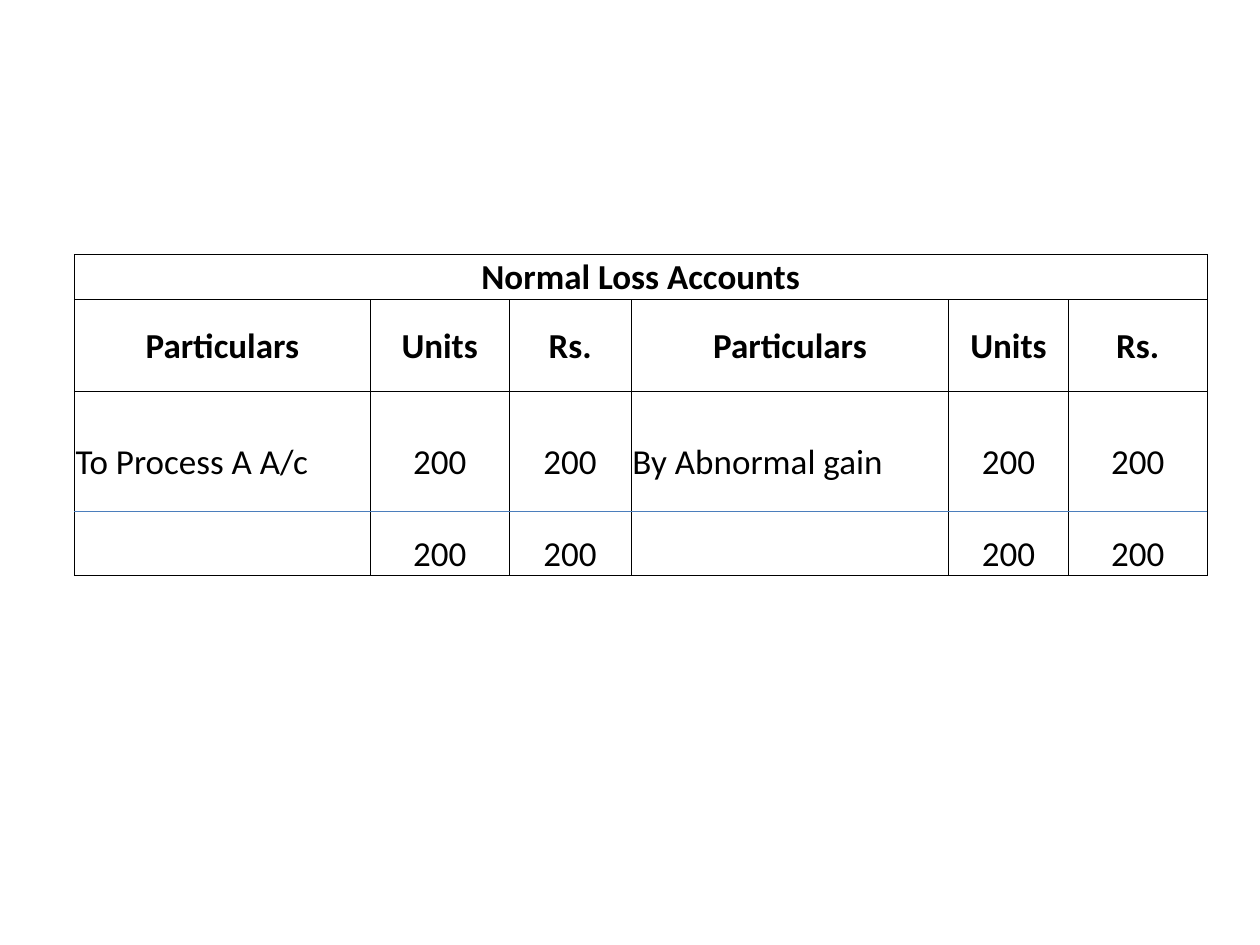
from lxml.etree import SubElement
from pptx import Presentation
from pptx.dml.color import RGBColor
from pptx.enum.shapes import MSO_CONNECTOR
from pptx.enum.text import MSO_ANCHOR, PP_ALIGN
from pptx.oxml.ns import qn
from pptx.util import Inches, Pt

BLACK = RGBColor(0x00, 0x00, 0x00)
BLUE = RGBColor(0x4B, 0x7E, 0xBC)

TITLE = "Normal Loss Accounts"
ROWS = [
    [TITLE, "", "", "", "", ""],
    ["Particulars", "Units", "Rs.", "Particulars", "Units", "Rs."],
    ["To Process A A/c", "200", "200", "By Abnormal gain", "200", "200"],
    ["", "200", "200", "", "200", "200"],
]
HEADER_ROWS = 2
TEXT_COLUMNS = (0, 3)
COL_WIDTHS = [2.35, 1.1, 0.97, 2.52, 0.95, 1.1]
ROW_HEIGHTS = [0.36, 0.73, 0.73, 0.73]
LEFT, TOP = 0.59, 2.02
WIDTH, HEIGHT = sum(COL_WIDTHS), sum(ROW_HEIGHTS)
TOTAL_LINE_Y = 4.06


def set_borders(cell, hidden=""):
    """Draw thin black borders, leaving out the sides named in hidden."""
    tc_pr = cell._tc.get_or_add_tcPr()
    for side in "LRTB":
        ln = SubElement(tc_pr, qn(f"a:ln{side}"), w=str(Pt(0.5)))
        if side in hidden:
            SubElement(ln, qn("a:noFill"))
        else:
            fill = SubElement(ln, qn("a:solidFill"))
            SubElement(fill, qn("a:srgbClr"), val=str(BLACK))


def format_cell(cell, text, row, col):
    header = row < HEADER_ROWS
    cell.margin_left = cell.margin_right = cell.margin_top = Inches(0.01)
    cell.margin_bottom = 0
    cell.vertical_anchor = MSO_ANCHOR.MIDDLE if header else MSO_ANCHOR.BOTTOM
    set_borders(cell, {2: "B", 3: "T"}.get(row, ""))
    cell.fill.background()
    p = cell.text_frame.paragraphs[0]
    p.text = text
    left = not header and col in TEXT_COLUMNS
    p.alignment = PP_ALIGN.LEFT if left else PP_ALIGN.CENTER
    p.font.size = Pt(20)
    for r in p.runs:
        r.font.name = "Calibri"
        r.font.size = Pt(20)
        r.font.bold = header
        r.font.color.rgb = BLACK


def add_account(slide):
    table = slide.shapes.add_table(
        len(ROWS), len(COL_WIDTHS),
        Inches(LEFT), Inches(TOP), Inches(WIDTH), Inches(HEIGHT)).table
    table.first_row = table.horz_banding = False
    for column, width in zip(table.columns, COL_WIDTHS):
        column.width = Inches(width)
    for row, height in zip(table.rows, ROW_HEIGHTS):
        row.height = Inches(height)
    table.cell(0, 0).merge(table.cell(0, len(COL_WIDTHS) - 1))
    for i, texts in enumerate(ROWS):
        for j, text in enumerate(texts):
            format_cell(table.cell(i, j), text, i, j)


def add_total_line(slide):
    line = slide.shapes.add_connector(
        MSO_CONNECTOR.STRAIGHT, Inches(LEFT), Inches(TOTAL_LINE_Y),
        Inches(LEFT + WIDTH), Inches(TOTAL_LINE_Y))
    line.line.color.rgb = BLUE
    line.line.width = Pt(0.75)
    SubElement(line._element.spPr, qn("a:effectLst"))


def main():
    prs = Presentation()
    prs.slide_width, prs.slide_height = Inches(10), Inches(7.5)
    slide = prs.slides.add_slide(prs.slide_layouts[6])
    add_account(slide)
    add_total_line(slide)
    prs.save("out.pptx")


if __name__ == "__main__":
    main()
